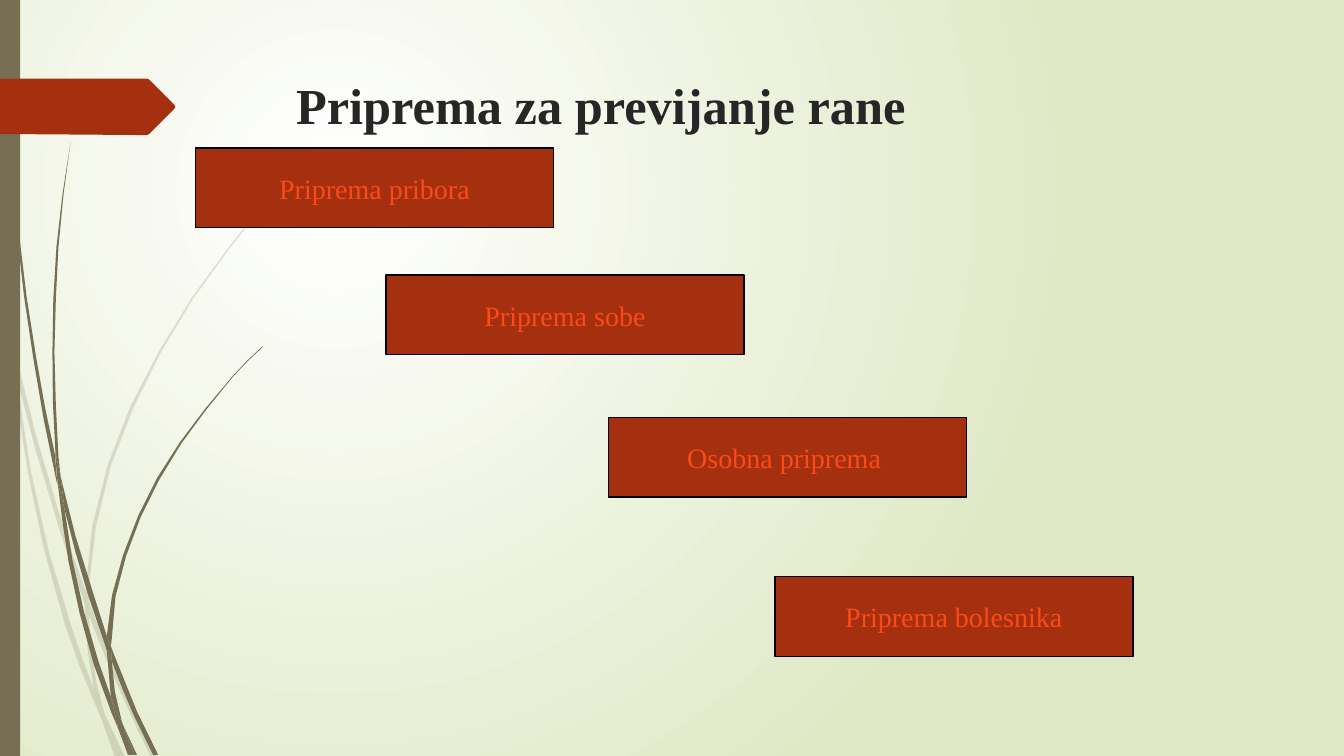
from dataclasses import dataclass

from lxml import etree
from pptx import Presentation
from pptx.dml.color import RGBColor
from pptx.enum.shapes import MSO_SHAPE
from pptx.enum.text import MSO_ANCHOR, MSO_AUTO_SIZE, PP_ALIGN
from pptx.oxml.ns import qn
from pptx.shapes.autoshape import Shape
from pptx.slide import Slide
from pptx.util import Cm, Pt

RECTANGLE = MSO_SHAPE.RECTANGLE
TOP, MIDDLE = MSO_ANCHOR.TOP, MSO_ANCHOR.MIDDLE
LEFT, CENTER = PP_ALIGN.LEFT, PP_ALIGN.CENTER
NO_AUTOFIT = MSO_AUTO_SIZE.NONE

FONT = "Times New Roman"
COLORS = {
    "glow": "FFFFFF",
    "meadow": "DFE8C4",
    "grass": "766F54",
    "brick": "A53010",
    "title": "262626",
    "step": "FB4A18",
    "outline": "000000",
}
SLIDE_WIDTH, SLIDE_HEIGHT = Cm(33.87), Cm(19.05)
STEP_WIDTH, STEP_HEIGHT = Cm(9.02), Cm(2.01)
OUTLINE_UNIT = Cm(2.54) / 100

Outline = list[tuple[float, float]]


@dataclass
class Step:
    text: str
    left: float
    top: float


@dataclass
class Tuft:
    opacity: int
    blades: list[Outline]


STEPS = [
    Step("Priprema pribora", 4.93, 3.73),
    Step("Priprema sobe", 9.73, 6.93),
    Step("Osobna priprema ", 15.34, 10.52),
    Step("Priprema bolesnika", 19.53, 14.53),
]

PALE_TUFT = Tuft(20, [
    [(11, 350), (9, 322), (0, 282), (0, 299), (10, 344)],
    [(58, 522), (70.6, 560.5), (84, 599), (85, 586), (73, 553), (62, 520), (36, 433),
     (14, 345), (17, 376), (36, 449)],
    [(92, 607), (88, 596), (88, 610), (104.7, 652.4), (123, 694), (136, 722.5), (150, 751),
     (155, 751), (140.6, 721.5), (127, 692), (109, 650)],
    [(119, 751), (124, 751), (105, 711)],
    [(93, 683), (80.8, 651), (70, 619), (47.9, 544.8), (31, 469), (23.6, 423), (17, 376),
     (11, 350), (18.4, 410), (28, 470), (43.9, 545.9), (65, 621), (77.9, 657.8), (92, 693),
     (101, 714), (99, 707)],
    [(84, 599), (85, 622.5), (87, 646), (93, 683), (96, 692), (105, 711), (103, 706),
     (95.5, 676), (91, 646), (88, 610), (88, 608)],
    [(88, 584), (95.3, 521.9), (110, 462), (132.4, 404.4), (160, 349), (192.3, 295.5),
     (229, 245), (248.1, 221), (268, 198), (290, 175), (312, 154), (312, 153), (289, 175),
     (268, 197), (247, 220), (228, 244), (190.8, 294.5), (158, 348), (129.5, 403),
     (107, 461), (91.5, 521.8), (85, 584), (85, 586), (88, 596)],
    [(101, 714), (114, 751), (119, 751)],
    [(88, 608), (88, 610), (88, 596), (85, 586), (84, 599)],
    [(96, 692), (93, 683), (99, 707), (101, 714), (119, 751), (105, 711)],
])
DARK_TUFT = Tuft(100, [
    [(7, 110), (11, 171.5), (17, 233), (23.9, 294), (33, 355), (43.4, 416), (56, 477),
     (57, 481), (55, 457), (55, 453), (44.7, 404), (36, 355), (26.4, 294), (19, 232),
     (12.4, 171), (8, 109), (5, 48), (4, 0), (3, 0), (4, 48)],
    [(88, 592), (106, 645), (106, 633), (106, 631), (93, 590), (75, 532), (60, 472),
     (64, 505), (75, 548)],
    [(113, 649), (110, 641), (111, 656), (121, 682), (132, 708), (152, 749), (157, 749),
     (136, 706)],
    [(110, 691), (98, 657), (83.5, 607.5), (72, 556), (64, 505), (57, 477), (62, 517.5),
     (68, 557), (79, 608), (93, 659), (111, 708), (117, 722), (116, 717)],
    [(60, 472), (58, 453), (55.4, 401), (54, 349), (55.4, 297), (58, 245), (63, 193),
     (70, 141), (62, 193), (56, 245), (52.9, 297), (52, 349), (52.5, 399.5), (55, 449)],
    [(133, 749), (136, 749), (122, 719)],
    [(57, 477), (64, 505), (60, 472), (55, 449), (55, 453)],
    [(111, 633), (114.6, 592), (125, 552), (139.6, 513), (158, 476), (180, 439.9),
     (205, 406), (231, 374), (245, 359), (261, 344), (260, 344), (245, 358), (231, 373),
     (204, 405), (178.5, 438.8), (156, 474), (137.1, 511.8), (122, 551), (111.1, 591),
     (106, 631), (110, 641)],
    [(117, 722), (127, 749), (131, 749)],
    [(106, 645), (110, 691), (116, 706), (122, 719), (121, 716), (114, 686), (111, 656),
     (109, 651)],
    [(106, 645), (109, 651), (111, 656), (110, 641), (106, 631), (106, 633)],
    [(116, 706), (110, 691), (116, 717), (117, 722), (130, 749), (133, 749), (122, 719)],
])
TITLE_MARKER = [(173, 108), (148, 133), (146, 134), (136, 134), (0, 133), (0, 78),
                (146, 78), (148, 79), (173, 104), (174, 106)]


def rgb(name: str) -> RGBColor:
    return RGBColor.from_string(COLORS[name])


def paint(shape: Shape, color: str) -> None:
    shape.shadow.inherit = False
    shape.fill.solid()
    shape.fill.fore_color.rgb = rgb(color)
    shape.line.fill.background()


def draw_outline(slide: Slide, outline: Outline, color: str) -> Shape:
    """Fill a closed outline given in hundredths of 2.54 cm."""
    points = [(round(x * OUTLINE_UNIT), round(y * OUTLINE_UNIT)) for x, y in outline]
    builder = slide.shapes.build_freeform(*points[0])
    builder.add_line_segments(points[1:], close=True)
    shape = builder.convert_to_shape()
    paint(shape, color)
    return shape


def draw_tuft(slide: Slide, tuft: Tuft) -> None:
    for outline in tuft.blades:
        blade = draw_outline(slide, outline, "grass")
        if tuft.opacity < 100:
            fill_color = next(blade.element.spPr.iter(qn("a:srgbClr")))
            etree.SubElement(fill_color, qn("a:alpha"), val=str(tuft.opacity * 1000))


def write(shape: Shape, text: str, size: int, color: str, anchor: MSO_ANCHOR,
          alignment: PP_ALIGN, bold: bool = False) -> None:
    frame = shape.text_frame
    frame.text = text
    frame.vertical_anchor = anchor
    paragraph = frame.paragraphs[0]
    paragraph.alignment = alignment
    font = paragraph.runs[0].font
    font.name, font.size, font.bold = FONT, Pt(size), bold
    font.color.rgb = rgb(color)


def draw_step(slide: Slide, step: Step) -> None:
    box = slide.shapes.add_shape(
        RECTANGLE, Cm(step.left), Cm(step.top), STEP_WIDTH, STEP_HEIGHT)
    paint(box, "brick")
    box.line.color.rgb = rgb("outline")
    box.line.width = Pt(1)
    box.text_frame.word_wrap = False
    write(box, step.text, 20, "step", MIDDLE, CENTER)


def fill_background(slide: Slide) -> None:
    """Spread a round glow whose centre lies in the upper left quarter."""
    fill = slide.background.fill
    fill.gradient()
    for stop, (color, position) in zip(fill.gradient_stops, [("glow", 0), ("meadow", 1)]):
        stop.color.rgb = rgb(color)
        stop.position = position
    gradient = next(slide.element.iter(qn("a:gradFill")))
    circle = etree.Element(qn("a:path"), path="circle")
    etree.SubElement(circle, qn("a:fillToRect"), l="50000", t="50000", r="100000", b="100000")
    gradient.replace(gradient.find(qn("a:lin")), circle)


def main() -> None:
    presentation = Presentation()
    presentation.slide_width, presentation.slide_height = SLIDE_WIDTH, SLIDE_HEIGHT
    slide = presentation.slides.add_slide(presentation.slide_layouts[5])
    fill_background(slide)

    for tuft in (PALE_TUFT, DARK_TUFT):
        draw_tuft(slide, tuft)
    side_bar = slide.shapes.add_shape(RECTANGLE, 0, 0, Cm(0.51), SLIDE_HEIGHT)
    paint(side_bar, "grass")
    draw_outline(slide, TITLE_MARKER, "brick")

    title = slide.shapes.title
    title.left, title.top, title.width, title.height = Cm(7.21), Cm(1.73), Cm(24.77), Cm(3.56)
    title.text_frame.auto_size = NO_AUTOFIT
    write(title, "Priprema za previjanje rane", 36, "title", TOP, LEFT, bold=True)

    for step in STEPS:
        draw_step(slide, step)
    presentation.save("out.pptx")


if __name__ == "__main__":
    main()
